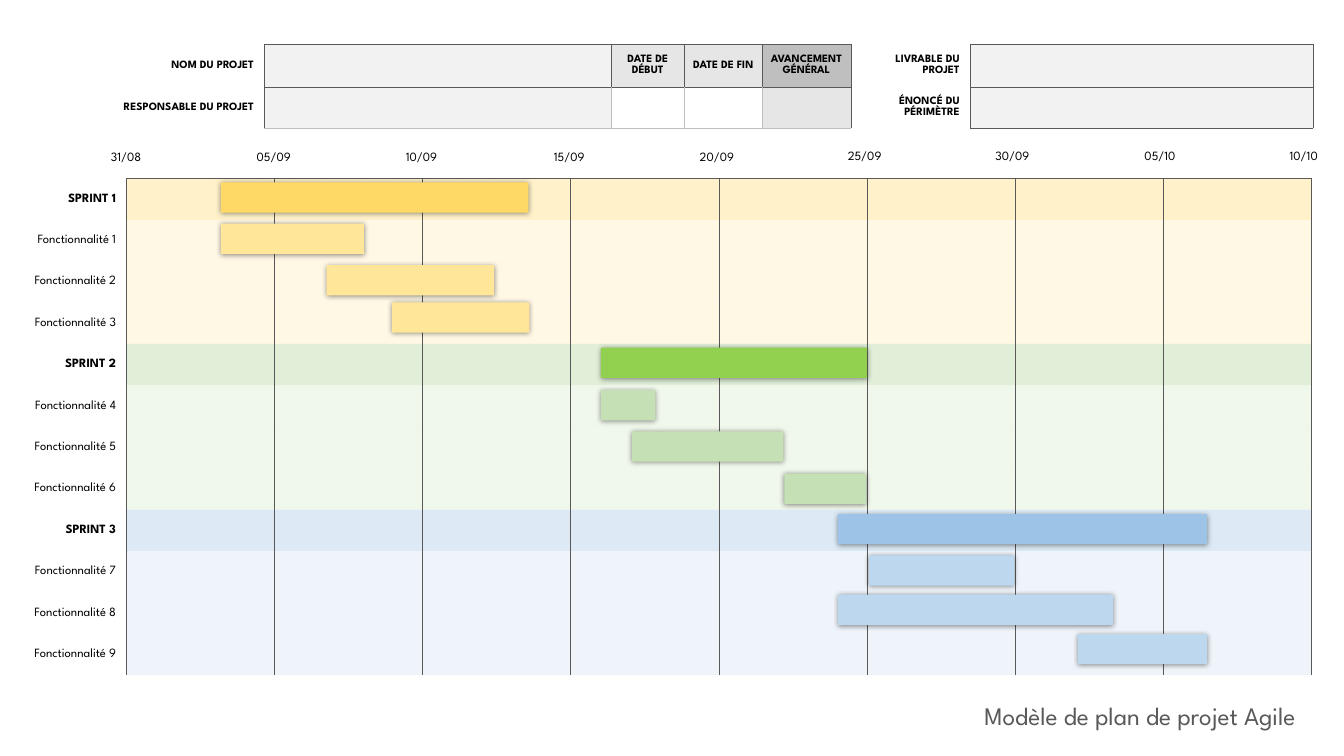
from lxml.etree import SubElement
from pptx import Presentation
from pptx.dml.color import RGBColor
from pptx.enum.shapes import MSO_SHAPE
from pptx.enum.text import MSO_ANCHOR as Anchor, PP_ALIGN as Align
from pptx.oxml.ns import qn
from pptx.util import Inches, Pt

FONT = "League Spartan"
NO_STYLE = "{2D5ABB26-0587-4C30-8999-92F81FD0307C}"
DARK, LIGHT = ("595959", 0.25), ("BFBFBF", 0.5)
BOX = dict(L=DARK, R=DARK, T=DARK, B=DARK)

TITLE = "Modèle de plan de projet Agile"
DATES = ["31/08", "05/09", "10/09", "15/09", "20/09", "25/09", "30/09", "05/10", "10/10"]

# Each sprint: band colours (sprint, feature), bar colours (sprint, feature),
# then one (label, bar left, bar top, bar width) per row, in inches.
SPRINTS = [
    (("FFE699", "FFF2CC"), ("FFD966", "FFE699"), [
        ("SPRINT 1", 2.19, 1.81, 3.05),
        ("Fonctionnalité 1", 2.19, 2.22, 1.42),
        ("Fonctionnalité 2", 3.24, 2.63, 1.66),
        ("Fonctionnalité 3", 3.89, 3.0, 1.36)]),
    (("C5E0B4", "E2F0D9"), ("92D050", "C5E0B4"), [
        ("SPRINT 2", 5.96, 3.45, 2.64),
        ("Fonctionnalité 4", 5.96, 3.87, 0.54),
        ("Fonctionnalité 5", 6.27, 4.28, 1.5),
        ("Fonctionnalité 6", 7.78, 4.7, 0.81)]),
    (("BDD7EE", "DEEBF7"), ("9DC3E6", "BDD7EE"), [
        ("SPRINT 3", 8.31, 5.1, 3.66),
        ("Fonctionnalité 7", 8.62, 5.51, 1.44),
        ("Fonctionnalité 8", 8.31, 5.9, 2.73),
        ("Fonctionnalité 9", 10.69, 6.29, 1.28)]),
]

# Header cells: (text, fill)
HEADER_WIDTHS = [1.81, 3.44, 0.73, 0.77, 0.88, 1.18, 3.4]
HEADER = [
    [("NOM DU PROJET", None), ("", "F2F2F2"), ("DATE DE DÉBUT", "E7E6E6"),
     ("DATE DE FIN", "E7E6E6"), ("AVANCEMENT GÉNÉRAL", "BFBFBF"),
     ("LIVRABLE DU PROJET", None), ("", "F2F2F2")],
    [("RESPONSABLE DU PROJET", None), ("", "F2F2F2"), ("", "FFFFFF"),
     ("", "FFFFFF"), ("", "E7E6E6"),
     ("ÉNONCÉ DU PÉRIMÈTRE", None), ("", "F2F2F2")],
]


def set_fill(fill, color, alpha=None):
    fill.solid()
    fill.fore_color.rgb = RGBColor.from_string(color)
    if alpha:
        rgb = fill._xPr.find(qn("a:solidFill")).find(qn("a:srgbClr"))
        SubElement(rgb, qn("a:alpha"), val=str(alpha * 1000))


def write_text(frame, text, size=9, bold=False, color="000000", align=Align.CENTER):
    frame.word_wrap = True
    paragraph = frame.paragraphs[0]
    paragraph.alignment = align
    run = paragraph.add_run()
    run.text = text
    run.font.name, run.font.size, run.font.bold = FONT, Pt(size), bold
    run.font.color.rgb = RGBColor.from_string(color)


def add_label(slide, text, left, top, width, height, **text_format):
    box = slide.shapes.add_textbox(Inches(left), Inches(top), Inches(width), Inches(height))
    write_text(box.text_frame, text, **text_format)


def add_plain_table(slide, left, top, widths, heights):
    frame = slide.shapes.add_table(
        len(heights), len(widths), Inches(left), Inches(top),
        Inches(sum(widths)), Inches(sum(heights)))
    table = frame.table
    table.first_row = table.horz_banding = False
    table._tbl.tblPr.find(qn("a:tableStyleId")).text = NO_STYLE
    for column, width in zip(table.columns, widths):
        column.width = Inches(width)
    for row, height in zip(table.rows, heights):
        row.height = Inches(height)
    return table


def format_cell(cell, borders, color=None, alpha=None, side_margin=0.1):
    """Set margins, then the borders (side -> colour, points), then the fill."""
    cell.vertical_anchor = Anchor.MIDDLE
    cell.margin_left = cell.margin_right = Inches(side_margin)
    cell.margin_top = cell.margin_bottom = Inches(0.03)
    properties = cell._tc.get_or_add_tcPr()
    for side in "LRTB":
        if side in borders:
            line_color, points = borders[side]
            line = SubElement(properties, qn("a:ln" + side), w=str(Pt(points)))
            solid = SubElement(line, qn("a:solidFill"))
            SubElement(solid, qn("a:srgbClr"), val=line_color)
    if color:
        set_fill(cell.fill, color, alpha)
    else:
        cell.fill.background()


def add_bar(slide, left, top, width, color):
    bar = slide.shapes.add_shape(
        MSO_SHAPE.RECTANGLE, Inches(left), Inches(top), Inches(width), Inches(0.3))
    set_fill(bar.fill, color)
    bar.line.fill.background()
    bar.shadow.inherit = False
    effects = bar._element.spPr.find(qn("a:effectLst"))
    shadow = SubElement(effects, qn("a:outerShdw"), blurRad=str(Pt(4)), dist=str(Pt(0.5)),
                        dir="5400000", algn="t", rotWithShape="0")
    black = SubElement(shadow, qn("a:srgbClr"), val="000000")
    SubElement(black, qn("a:alpha"), val="43000")


def add_schedule(slide):
    periods = len(DATES) - 1
    rows = [(bands[index > 0], label, index == 0)
            for bands, _, tasks in SPRINTS
            for index, (label, *_) in enumerate(tasks)]
    table = add_plain_table(slide, 0.07, 1.77, [1.18] + [1.47] * periods,
                            [4.93 / len(rows)] * len(rows))
    for number, (band, label, is_sprint) in enumerate(rows):
        name_cell = table.cell(number, 0)
        format_cell(name_cell, dict(R=DARK))
        write_text(name_cell.text_frame, label, bold=is_sprint, align=Align.RIGHT)
        borders = dict(L=DARK, R=DARK)
        if number == 0:
            borders["T"] = DARK
        for period in range(1, periods + 1):
            format_cell(table.cell(number, period), borders, band, alpha=50)


def header_borders(row, column):
    if column == 0:
        return dict(R=DARK)
    if column == 5:
        return dict(L=DARK, R=DARK)
    if row == 0 or column == 6:
        return BOX
    return dict(L=DARK if column == 1 else LIGHT, R=DARK if column == 4 else LIGHT,
                T=DARK, B=LIGHT)


def add_header(slide):
    table = add_plain_table(slide, 0.81, 0.44, HEADER_WIDTHS, [0.42, 0.41])
    for row, cells in enumerate(HEADER):
        for column, (text, color) in enumerate(cells):
            cell = table.cell(row, column)
            format_cell(cell, header_borders(row, column), color,
                        side_margin=0.04 if text and color else 0.1)
            if text:
                write_text(cell.text_frame, text, size=8, bold=True,
                           align=Align.CENTER if color else Align.RIGHT)


def main():
    presentation = Presentation()
    presentation.slide_width, presentation.slide_height = Inches(13.33), Inches(7.5)
    slide = presentation.slides.add_slide(presentation.slide_layouts[6])

    add_label(slide, TITLE, 5.82, 6.9, 7.13, 0.4, size=18, color="595959", align=Align.RIGHT)
    add_schedule(slide)
    for index, date in enumerate(DATES):
        left = min(0.94 + 1.465 * index, 12.62)
        add_label(slide, date, left, 1.43 if index < 5 else 1.42, 0.62, 0.25)
    for _, colors, tasks in SPRINTS:
        for index, (_, left, top, width) in enumerate(tasks):
            add_bar(slide, left, top, width, colors[index > 0])
    add_header(slide)
    presentation.save("out.pptx")


if __name__ == "__main__":
    main()
